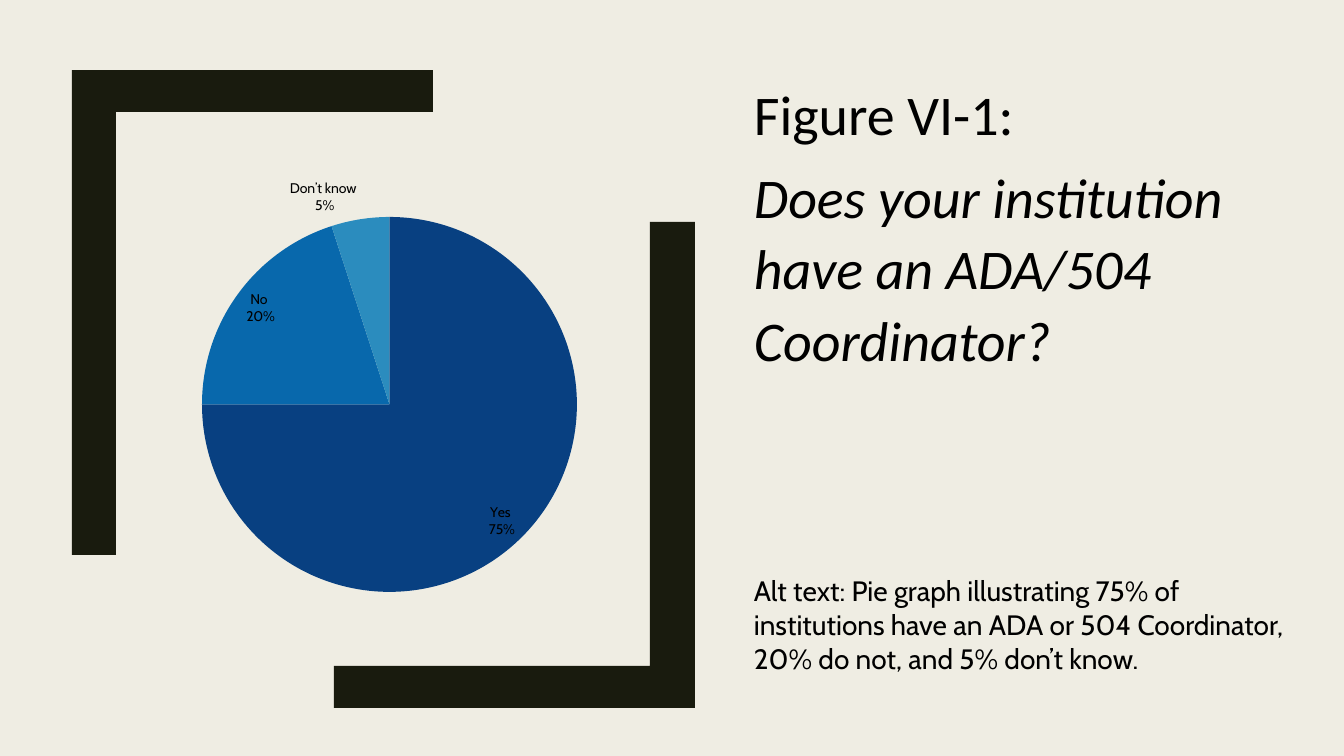
from lxml.etree import SubElement, Element
from pptx import Presentation
from pptx.chart.data import CategoryChartData
from pptx.dml.color import RGBColor
from pptx.enum.chart import XL_CHART_TYPE, XL_LABEL_POSITION
from pptx.enum.text import MSO_ANCHOR
from pptx.oxml.ns import qn
from pptx.util import Pt

PX = 914400 / 100.8
BACKGROUND, BRACKET, BLACK = "EFEDE3", "191B0E", "000000"

TITLE = [("Figure VI-1:", False),
         ("Does your institution have an ADA/504 Coordinator?", True)]
TITLE_BOX = (744, 60, 529, 318)
CAPTION = [("Alt text: Pie graph illustrating 75% of institutions have an ADA or 504 "
            "Coordinator, 20% do not, and 5% don’t know.", False)]
CAPTION_BOX = (744, 569, 552, 112)

ANSWERS = [("Yes ", 75, "084081"), ("No ", 20, "0868AC"), ("Don’t know ", 5, "2B8CBE")]
CHART_BOX = (87, 164, 606, 440)
PIE_BOX = (202, 217, 375, 375)

BRACKETS = [
    [(650, 222), (695, 222), (695, 708), (334, 708), (334, 666), (650, 666)],
    [(116, 555), (72, 555), (72, 70), (433, 70), (433, 112), (116, 112)],
]


def px(*lengths):
    return [round(length * PX) for length in lengths]


def color(value):
    return RGBColor.from_string(value)


def add_text(slide, paragraphs, box, size, font, anchor=MSO_ANCHOR.TOP,
             line_spacing=None, space_after=0):
    frame = slide.shapes.add_textbox(*px(*box)).text_frame
    frame.word_wrap = True
    frame.vertical_anchor = anchor
    for index, (text, italic) in enumerate(paragraphs):
        paragraph = frame.add_paragraph() if index else frame.paragraphs[0]
        paragraph.line_spacing = line_spacing
        paragraph.space_after = Pt(space_after)
        run = paragraph.add_run()
        run.text = text
        run.font.size = Pt(size)
        run.font.name = font
        run.font.italic = italic
        run.font.color.rgb = color(BLACK)


def add_bracket(slide, points):
    builder = slide.shapes.build_freeform(*points[0], scale=PX)
    builder.add_line_segments(points[1:], close=True)
    shape = builder.convert_to_shape()
    shape.shadow.inherit = False
    shape.fill.solid()
    shape.fill.fore_color.rgb = color(BRACKET)
    shape.line.fill.background()


def place_pie(chart):
    plot_area = chart._chartSpace.chart.plotArea
    layout = plot_area.find(qn("c:layout"))
    if layout is None:
        layout = Element(qn("c:layout"))
        plot_area.insert(0, layout)
    manual = SubElement(layout, qn("c:manualLayout"))
    left, top, width, height = CHART_BOX
    pie_left, pie_top, pie_width, pie_height = PIE_BOX
    settings = {"layoutTarget": "inner", "xMode": "edge", "yMode": "edge",
                "x": (pie_left - left) / width, "y": (pie_top - top) / height,
                "w": pie_width / width, "h": pie_height / height}
    for name, value in settings.items():
        SubElement(manual, qn(f"c:{name}")).set("val", str(value))


def add_pie(slide):
    data = CategoryChartData()
    data.categories = [name for name, _, _ in ANSWERS]
    data.add_series("Series 1", [value for _, value, _ in ANSWERS])
    chart = slide.shapes.add_chart(XL_CHART_TYPE.PIE, *px(*CHART_BOX), data).chart
    chart.has_legend = False
    chart.has_title = False
    chart.font.name = "Cabin"
    chart.font.size = Pt(10)
    chart.font.color.rgb = color(BLACK)
    plot = chart.plots[0]
    plot.vary_by_categories = True
    for index, (_, _, fill) in enumerate(ANSWERS):
        point = plot.series[0].points[index]
        point.format.fill.solid()
        point.format.fill.fore_color.rgb = color(fill)
        point.format.line.fill.background()
    plot.has_data_labels = True
    labels = plot.data_labels
    labels.show_value = False
    labels.show_category_name = True
    labels.show_percentage = True
    labels.position = XL_LABEL_POSITION.BEST_FIT
    separator = Element(qn("c:separator"))
    separator.text = "\n"
    labels._element.find(qn("c:showBubbleSize")).addnext(separator)
    place_pie(chart)


def main():
    presentation = Presentation()
    presentation.slide_width, presentation.slide_height = px(1344, 756)
    slide = presentation.slides.add_slide(presentation.slide_layouts[6])
    slide.background.fill.solid()
    slide.background.fill.fore_color.rgb = color(BACKGROUND)
    add_text(slide, TITLE, TITLE_BOX, 40, "Calibri", anchor=MSO_ANCHOR.BOTTOM,
             line_spacing=1.07, space_after=8)
    for points in BRACKETS:
        add_bracket(slide, points)
    add_pie(slide)
    add_text(slide, CAPTION, CAPTION_BOX, 20, "Cabin")
    presentation.save("out.pptx")


if __name__ == "__main__":
    main()
